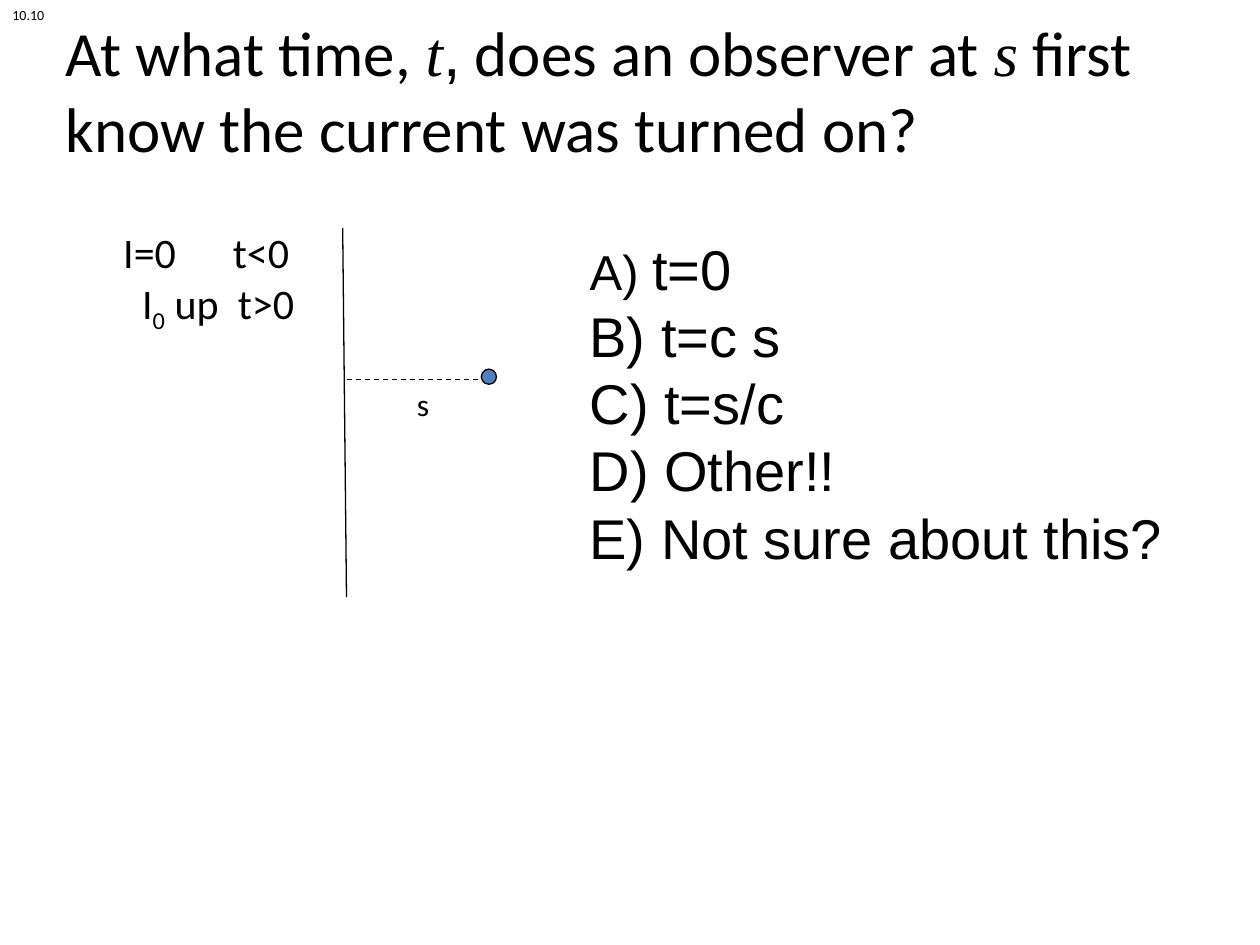
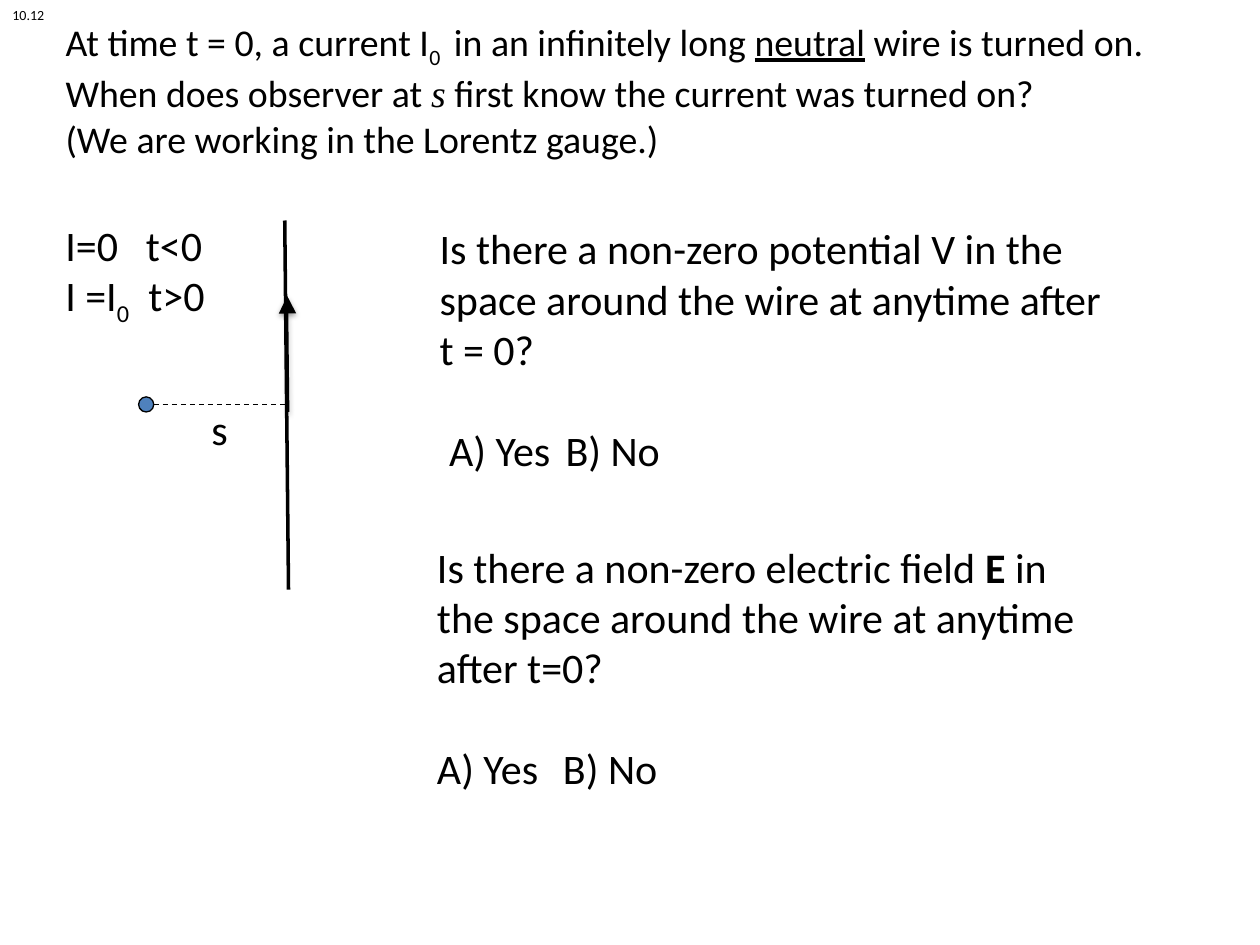
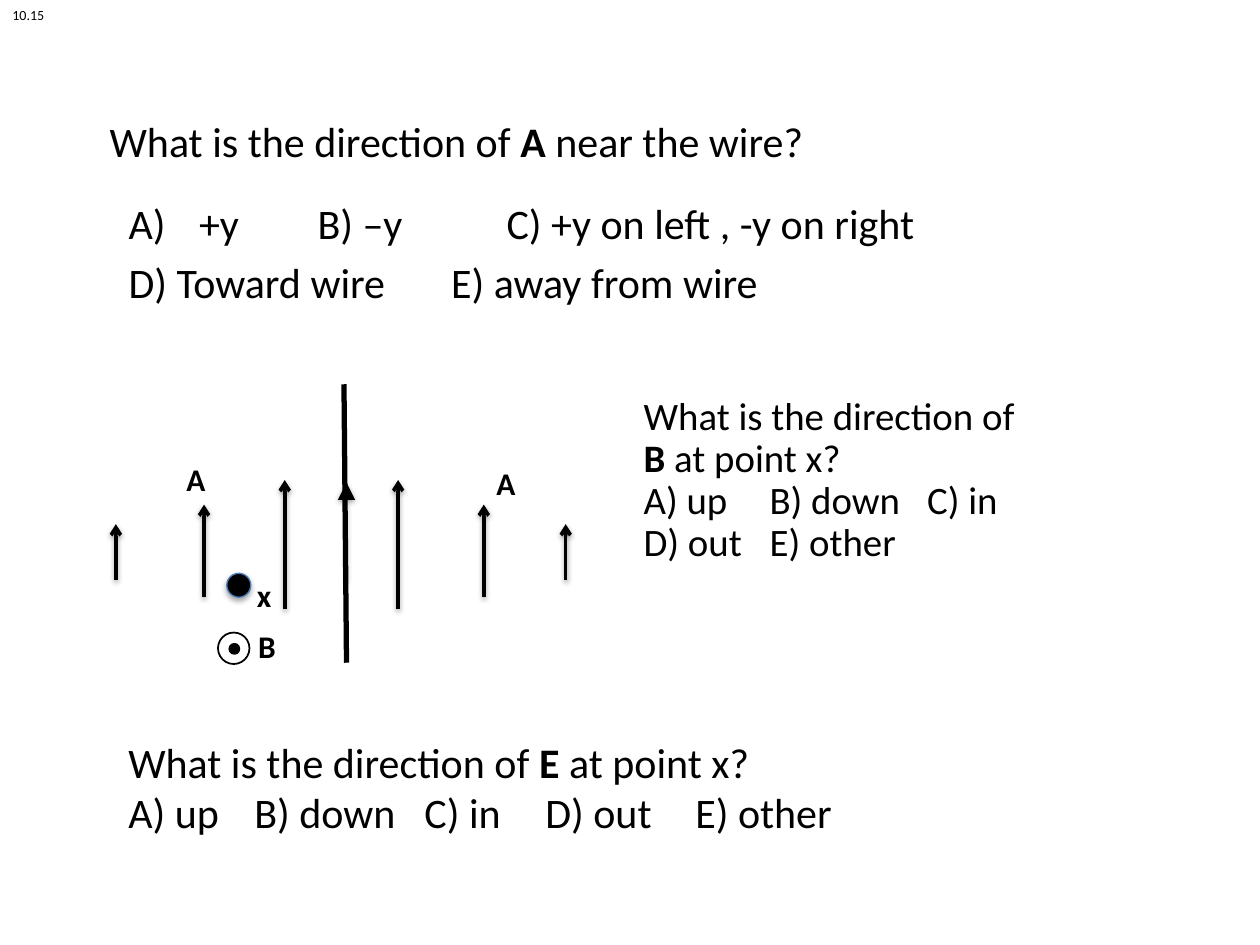
"""Build three physics concept-question slides about a current-carrying wire."""
from lxml import etree
from pptx import Presentation
from pptx.dml.color import RGBColor
from pptx.enum.dml import MSO_LINE
from pptx.enum.shapes import MSO_CONNECTOR, MSO_SHAPE
from pptx.enum.text import MSO_ANCHOR, MSO_AUTO_SIZE, PP_ALIGN
from pptx.oxml.ns import qn
from pptx.util import Inches, Pt

BLACK = RGBColor(0x00, 0x00, 0x00)
BLUE = RGBColor(0x4F, 0x81, 0xBD)
RIM_BLUE = RGBColor(0x4B, 0x7E, 0xBC)
SANS, SERIF, ARIAL = "Calibri", "Times New Roman", "Arial"
TOP, MIDDLE = MSO_ANCHOR.TOP, MSO_ANCHOR.MIDDLE
LEFT = PP_ALIGN.LEFT
DASH = MSO_LINE.DASH
STRAIGHT = MSO_CONNECTOR.STRAIGHT
OVAL = MSO_SHAPE.OVAL
NO_FIT = MSO_AUTO_SIZE.NONE
WIDTH, HEIGHT = 10, 7.5
CONTENT_LAYOUT, TITLE_LAYOUT = 1, 5
DOT = 0.12

SYMBOL = {"font": SERIF, "italic": True}
VECTOR = {"bold": True}
SUB = {"base": -25000}
CURRENT_HEAD = {"type": "triangle", "w": "lg", "len": "lg"}
FIELD_HEAD = {"type": "arrow"}


def para(*runs, **layout):
    """Pair the runs of a paragraph with its layout."""
    return runs, layout


TIMING_TITLE = [para("At what time, ", ("t", SYMBOL), (",", {"font": ARIAL}),
                     " does an observer at ", ("s", SYMBOL),
                     " first know the current was turned on?")]
TIMING_ANSWERS = [para((" ", {"size": 28}), "t=0")] + [
    para(answer) for answer in (" t=c s", " t=s/c", " Other!!", " Not sure about this?")]
TIMING_CURRENT = [para("I=0\tt<0", tabs=[0.87]),
                  para("\tI", ("0", SUB), " up\tt>0", tabs=[0.15, 0.91])]

POTENTIAL_TITLE = [
    para("At time t = 0, a current I", ("0 ", SUB), " in an infinitely long ",
         ("neutral", {"underline": True}),
         " wire is turned on. When does observer at ", ("s", SYMBOL),
         " first know the current was turned on?"),
    para("(We are working in the Lorentz gauge.)")]
POTENTIAL_CURRENT = [para("I=0\tt<0", tabs=[0.64]),
                     para("I =I", ("0", SUB), "\tt>0", tabs=[0.66])]
YES_NO = "A) Yes\tB) No"
POTENTIAL_QUESTIONS = [
    ((3.39, 1.56, 5.52, 2.42),
     [para("Is there a non-zero potential V in the space around the wire "
           "at anytime after t = 0?"),
      para(" " + YES_NO, tabs=[1], before=29)]),
    ((3.37, 4.14, 5.37, 2.31),
     [para("Is there a non-zero electric field ", ("E", VECTOR),
           " in the space around the wire at anytime after t=0?"),
      para(YES_NO, tabs=[1], before=29)])]

FIELD_TITLE = [para("What is the direction of ", ("A ", VECTOR), "near the wire?")]
FIELD_ANSWERS = [para("+y\t\tB) –y\t\tC) +y on left , -y on right", numbered=True),
                 para("D) Toward wire\t\tE) away from wire", numbered=False)]
B_QUESTION = [para("What is the direction of ", ("B", VECTOR), " at point x?"),
              para("A) up\tB) down\tC) in", tabs=[1, 2.25]),
              para("D) out\tE) other", tabs=[1, 2.25])]
E_QUESTION = [para("What is the direction of ", ("E", VECTOR), " at point x?"),
              para("A) up\tB) down\tC) in\tD) out\tE) other",
                   tabs=[1, 2.35, 3.31, 4.5])]
FIELD_LABELS = [("A", (1.38, 3.6, 0.35, 0.4)), ("A", (3.84, 3.63, 0.35, 0.4)),
                ("x", (1.94, 4.52, 0.32, 0.4)), ("B", (1.95, 4.93, 0.3, 0.4))]
FIELD_ARROWS = [(0.44, 4.38, (0.92, 4.49)), (0.73, 4.37, (1.62, 3.84)),
                (1.02, 4.32, (2.26, 3.16))]


def add_child(parent, tag, **attributes):
    """Append a drawing element and return it."""
    return etree.SubElement(parent, qn(tag), {k: str(v) for k, v in attributes.items()})


def write(frame, paragraphs, size=24, font=SANS, bold=False, anchor=TOP, wrap=True,
          before=None, spacing=None, indent=None, numbered=None):
    """Fill a text frame with formatted paragraphs."""
    frame.auto_size, frame.word_wrap, frame.vertical_anchor = NO_FIT, wrap, anchor
    for i, (runs, layout) in enumerate(paragraphs):
        line = frame.add_paragraph() if i else frame.paragraphs[0]
        line.alignment = LEFT
        gap = layout.get("before", before)
        if gap is not None:
            line.space_before = Pt(gap)
        if spacing:
            line.line_spacing = spacing
        props = line._p.get_or_add_pPr()
        if indent:
            props.set("marL", str(Inches(indent)))
            props.set("indent", str(-Inches(indent)))
        lettered = layout.get("numbered", numbered)
        if lettered:
            add_child(props, "a:buFont", typeface=font)
            add_child(props, "a:buAutoNum", type="alphaUcParenR")
        elif lettered is False:
            add_child(props, "a:buNone")
        if "tabs" in layout:
            stops = add_child(props, "a:tabLst")
            for stop in layout["tabs"]:
                add_child(stops, "a:tab", pos=Inches(stop), algn="l")
        for part in runs:
            words, style = (part, {}) if isinstance(part, str) else part
            run = line.add_run()
            run.text = words
            run.font.size = Pt(style.get("size", size))
            run.font.name = style.get("font", font)
            run.font.bold = style.get("bold", bold)
            run.font.italic = style.get("italic", False)
            run.font.underline = style.get("underline", False)
            run.font.color.rgb = BLACK
            if "base" in style:
                run.font._element.set("baseline", str(style["base"]))


def add_text(slide, at, paragraphs, **style):
    """Add a text box."""
    box = slide.shapes.add_textbox(*map(Inches, at))
    write(box.text_frame, paragraphs, **style)


def fill_placeholder(holder, at, paragraphs, **style):
    """Move a placeholder and write into it."""
    holder.left, holder.top, holder.width, holder.height = map(Inches, at)
    write(holder.text_frame, paragraphs, **style)


def add_shadow(shape, alpha):
    """Give a shape a soft shadow straight below; zero alpha means none."""
    effects = add_child(shape._element.spPr, "a:effectLst")
    if alpha:
        shadow = add_child(effects, "a:outerShdw", blurRad=Pt(3.1), dist=Pt(1.6),
                           dir=5400000, rotWithShape=0)
        color = add_child(shadow, "a:srgbClr", val=BLACK)
        add_child(color, "a:alpha", val=alpha * 1000)


def add_line(slide, start, end, width=0.75, dash=None, head=None):
    """Draw a line; one with an arrowhead casts a shadow."""
    line = slide.shapes.add_connector(STRAIGHT, *map(Inches, start + end))
    line.line.color.rgb = BLACK
    line.line.width = Pt(width)
    if dash:
        line.line.dash_style = dash
    if head:
        add_child(line.line._get_or_add_ln(), "a:tailEnd", **head)
    add_shadow(line, 38 if head else 0)


def add_circle(slide, left, top, size, fill=None, rim=BLACK, width=0.75, shadow=0):
    """Draw a circle."""
    circle = slide.shapes.add_shape(OVAL, *map(Inches, (left, top, size, size)))
    if fill is None:
        circle.fill.background()
    else:
        circle.fill.solid()
        circle.fill.fore_color.rgb = fill
    circle.line.color.rgb = rim
    circle.line.width = Pt(width)
    add_shadow(circle, shadow)


def start_slide(deck, layout, number, title, at, size):
    """Add a slide with its title and its number in the corner."""
    slide = deck.slides.add_slide(deck.slide_layouts[layout])
    fill_placeholder(slide.shapes.title, at, title, size=size, anchor=MIDDLE)
    add_text(slide, (0, 0, 0.46, 0.24), [para(number)], size=8, wrap=False)
    return slide


def build_timing(deck):
    """When does the observer notice the current?"""
    slide = start_slide(deck, CONTENT_LAYOUT, "10.10", TIMING_TITLE,
                        (0.42, 0.17, 9.08, 1.08), 36)
    fill_placeholder(slide.placeholders[1], (4.58, 1.81, 5.42, 2.79), TIMING_ANSWERS,
                     size=32, font=ARIAL, before=0, indent=0.38, numbered=True)
    add_line(slide, (2.75, 4.74), (2.72, 1.81))
    add_line(slide, (2.75, 3.01), (3.82, 3.01), dash=DASH)
    add_circle(slide, 3.82, 2.93, DOT, BLUE)
    add_text(slide, (3.21, 3.01, 0.33, 0.4), [para("s")], size=18, wrap=False)
    add_text(slide, (0.88, 1.75, 1.74, 0.91), TIMING_CURRENT)


def build_potential(deck):
    """Are there a potential and an electric field around the wire?"""
    slide = start_slide(deck, TITLE_LAYOUT, "10.12", POTENTIAL_TITLE,
                        (0.42, 0.17, 9.33, 1.08), 21.6)
    add_line(slide, (2.29, 4.68), (2.26, 1.75), width=2)
    add_line(slide, (1.22, 3.21), (2.29, 3.21), dash=DASH)
    add_circle(slide, 1.1, 3.15, DOT, BLUE)
    add_text(slide, (1.58, 3.15, 0.33, 0.5), [para("s")], wrap=False)
    add_text(slide, (0.42, 1.69, 1.33, 0.91), POTENTIAL_CURRENT)
    add_line(slide, (2.29, 3.27), (2.28, 2.35), width=1, head=CURRENT_HEAD)
    for at, question in POTENTIAL_QUESTIONS:
        add_text(slide, at, question, anchor=MIDDLE)


def build_fields(deck):
    """Which way do A, B and E point?"""
    slide = start_slide(deck, CONTENT_LAYOUT, "10.15", FIELD_TITLE,
                        (0.77, 0.71, 6.39, 0.81), 24)
    fill_placeholder(slide.placeholders[1], (0.92, 1.52, 7.02, 1.11), FIELD_ANSWERS,
                     indent=0.56)
    add_line(slide, (2.75, 5.26), (2.73, 3.05), width=3)
    for length, middle, columns in FIELD_ARROWS:
        for x in columns:
            add_line(slide, (x, middle + length / 2), (x, middle - length / 2),
                     width=2, head=FIELD_HEAD)
    add_line(slide, (2.75, 4.61), (2.75, 3.83), width=1, head=CURRENT_HEAD)
    add_circle(slide, 1.8, 4.55, 0.19, BLACK, rim=RIM_BLUE, shadow=35)
    add_circle(slide, 1.73, 5.02, 0.25, width=1)
    add_circle(slide, 1.82, 5.11, 0.08, BLACK, width=1)
    for label, at in FIELD_LABELS:
        add_text(slide, at, [para(label)], size=18, bold=True, wrap=False)
    add_text(slide, (5.01, 3.08, 3.34, 1.47), B_QUESTION, size=22.2, spacing=0.9,
             anchor=MIDDLE)
    add_text(slide, (0.92, 5.51, 6.56, 1.47), E_QUESTION, anchor=MIDDLE)


def main():
    """Build and save the deck."""
    deck = Presentation()
    deck.slide_width, deck.slide_height = Inches(WIDTH), Inches(HEIGHT)
    for build in (build_timing, build_potential, build_fields):
        build(deck)
    deck.save("out.pptx")


if __name__ == "__main__":
    main()
